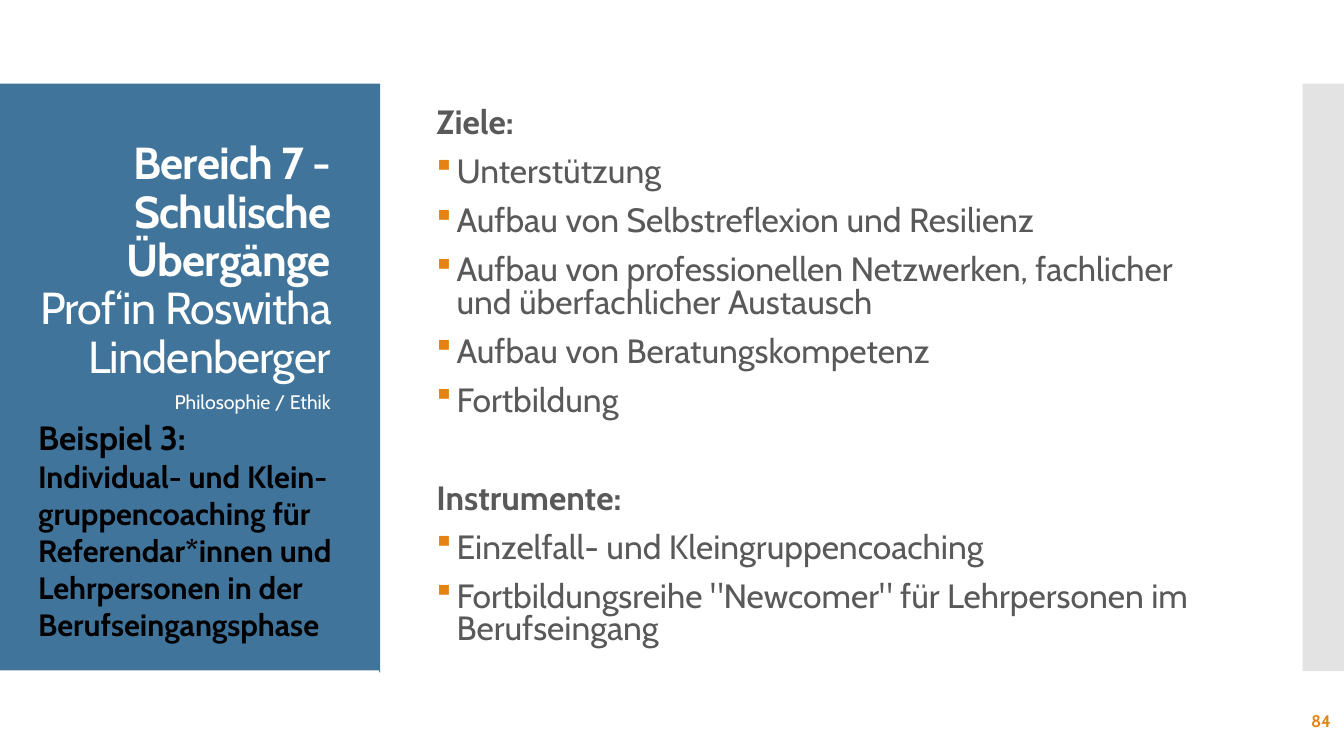
from pptx import Presentation
from pptx.dml.color import RGBColor
from pptx.enum.shapes import MSO_SHAPE
from pptx.enum.text import MSO_ANCHOR, PP_ALIGN
from pptx.oxml.ns import qn
from pptx.util import Inches, Pt
from lxml.etree import SubElement

BLUE = RGBColor(0x40, 0x74, 0x9B)
ORANGE = RGBColor(0xE4, 0x83, 0x12)
LIGHT_GREY = RGBColor(0xE3, 0xE3, 0xE3)
TEXT_GREY = RGBColor(0x59, 0x59, 0x59)
WHITE = RGBColor(0xFF, 0xFF, 0xFF)
BLACK = RGBColor(0, 0, 0)
FONT = "Cabin"

# Content: (left, top, width, height) and fill of each panel;
# the white strip trims the lower edge of the blue panel
PANELS = [
    ((12.92, 0.83, 0.42, 5.83), LIGHT_GREY),
    ((0, 0.83, 3.77, 5.84), BLUE),
    ((-0.01, 6.65, 3.77, 0.84), WHITE),
]

# Text boxes: place, anchor, alignment, line spacing, letter spacing, colour,
# then lines of (text, size, bold)
LABELS = [
    ((0.28, 1.25, 3.1, 2.6), MSO_ANCHOR.BOTTOM, PP_ALIGN.RIGHT, 0.9, -0.6, WHITE,
     [("Bereich 7 - Schulische Übergänge", 32, True),
      ("Prof‘in Roswitha Lindenberger", 32, False)]),
    ((0.28, 3.82, 3.1, 2.54), MSO_ANCHOR.TOP, PP_ALIGN.RIGHT, 1.0, 0, WHITE,
     [("Philosophie / Ethik", 14, False)]),
    ((0.28, 4.09, 3.4, 2.36), MSO_ANCHOR.TOP, PP_ALIGN.LEFT, 1.0, 0, BLACK,
     [("Beispiel 3:", 24, True),
      ("Individual- und Klein-gruppencoaching für Referendar*innen und "
       "Lehrpersonen in der Berufseingangsphase", 22, True)]),
    ((11.63, 6.95, 1.67, 0.4), MSO_ANCHOR.MIDDLE, PP_ALIGN.RIGHT, 1.0, 0, ORANGE,
     [("84", 12, True)]),
]

BODY_PLACE = (4.23, 0.95, 8, 5.6)
SECTIONS = {
    "Ziele:": [
        "Unterstützung",
        "Aufbau von Selbstreflexion und Resilienz",
        "Aufbau von professionellen Netzwerken, fachlicher und überfachlicher Austausch",
        "Aufbau von Beratungskompetenz",
        "Fortbildung",
    ],
    "Instrumente:": [
        "Einzelfall- und Kleingruppencoaching",
        'Fortbildungsreihe "Newcomer" für Lehrpersonen im Berufseingang',
    ],
}
BODY_SIZE, ITEM_GAP, SECTION_GAP = 24, 12, 47
# In Wingdings this character is a small square
BULLET_FONT, BULLET = "Wingdings", "§"


def add_text_frame(slide, place, anchor):
    frame = slide.shapes.add_textbox(*map(Inches, place)).text_frame
    frame.word_wrap = True
    frame.vertical_anchor = anchor
    return frame


def add_run(paragraph, text, size, bold, color):
    run = paragraph.add_run()
    run.text = text
    for name, value in {"name": FONT, "size": Pt(size), "bold": bold}.items():
        setattr(run.font, name, value)
    run.font.color.rgb = color
    return run


def add_bullet(paragraph):
    properties = paragraph._p.get_or_add_pPr()
    properties.set("marL", str(Inches(0.2)))
    properties.set("indent", str(-Inches(0.2)))
    color = SubElement(properties, qn("a:buClr"))
    SubElement(color, qn("a:srgbClr")).set("val", str(ORANGE))
    font = SubElement(properties, qn("a:buFont"))
    font.set("typeface", BULLET_FONT)
    font.set("charset", "2")
    SubElement(properties, qn("a:buChar")).set("char", BULLET)


presentation = Presentation()
presentation.slide_width, presentation.slide_height = Inches(13.33), Inches(7.5)
slide = presentation.slides.add_slide(presentation.slide_layouts[6])

# Panels
for place, color in PANELS:
    panel = slide.shapes.add_shape(MSO_SHAPE.RECTANGLE, *map(Inches, place))
    panel.shadow.inherit = False
    panel.fill.solid()
    panel.fill.fore_color.rgb = color
    panel.line.fill.background()

# Title, subject, example and slide number
for place, anchor, alignment, line_spacing, letter_spacing, color, lines in LABELS:
    paragraph = add_text_frame(slide, place, anchor).paragraphs[0]
    paragraph.alignment = alignment
    paragraph.line_spacing = line_spacing
    for index, (text, size, bold) in enumerate(lines):
        if index:
            paragraph.add_line_break()
        run = add_run(paragraph, text, size, bold, color)
        if letter_spacing:
            run._r.get_or_add_rPr().set("spc", str(round(letter_spacing * 100)))

# Goals and instruments
body = add_text_frame(slide, BODY_PLACE, MSO_ANCHOR.MIDDLE)
for section_index, (heading, items) in enumerate(SECTIONS.items()):
    for index, text in enumerate([heading, *items]):
        is_heading = index == 0
        is_first = is_heading and section_index == 0
        paragraph = body.paragraphs[0] if is_first else body.add_paragraph()
        if not is_heading:
            add_bullet(paragraph)
        gap = 0 if is_first else SECTION_GAP if is_heading else ITEM_GAP
        paragraph.space_before = Pt(gap)
        paragraph.line_spacing = 0.8
        add_run(paragraph, text, BODY_SIZE, is_heading, TEXT_GREY)

presentation.save("out.pptx")
